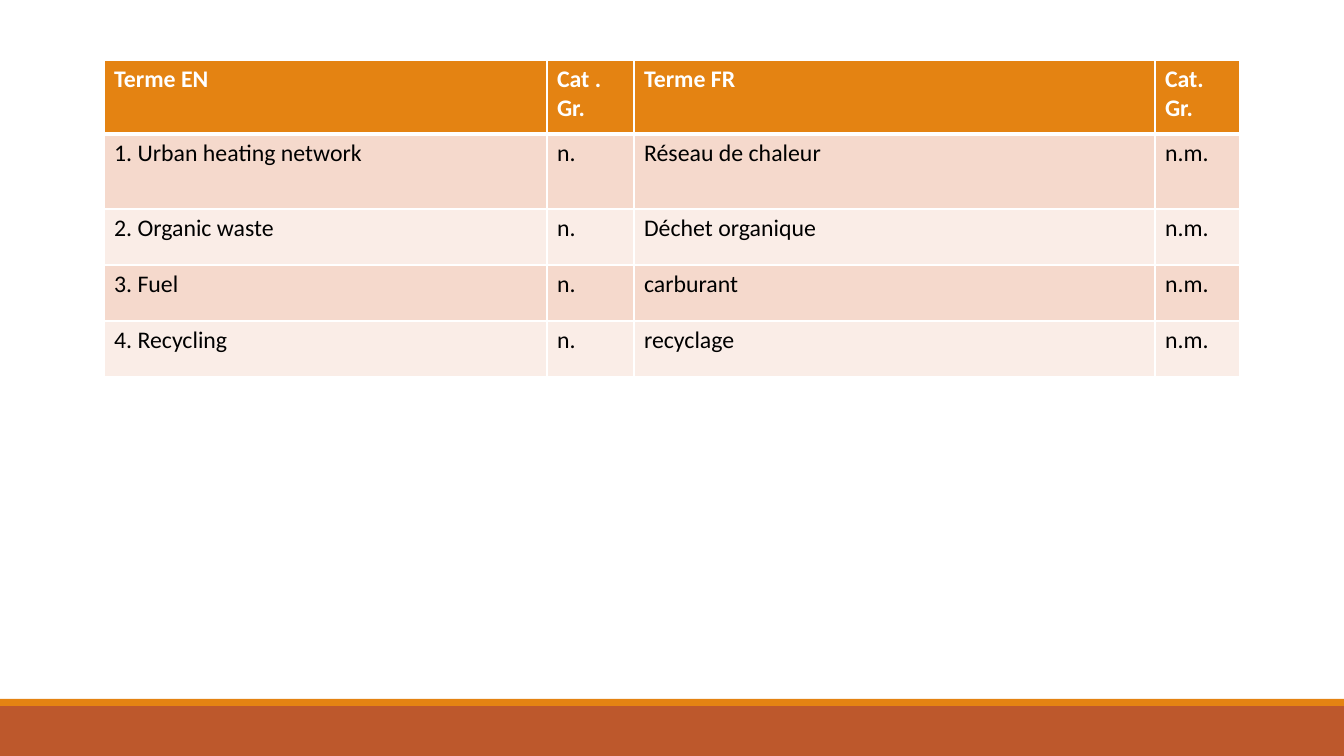
from lxml.etree import SubElement
from pptx import Presentation
from pptx.dml.color import RGBColor
from pptx.enum.shapes import MSO_SHAPE
from pptx.oxml.ns import qn
from pptx.util import Emu, Pt


def px(n):
    return Emu(round(n * 914400 / 100.8))


def color(hex_code):
    return RGBColor.from_string(hex_code)


class SlideBuilder:
    """Holds the style and the current slide, and draws each kind of element."""

    font = "Calibri"
    size = Pt(17)
    white, black = "FFFFFF", "000000"
    orange, rust = "E48312", "BD582C"
    bands = ("F5D9CC", "FAEDE7")

    def __init__(self, slide):
        self.slide = slide

    def bar(self, x, y, w, h, fill):
        sp = self.slide.shapes.add_shape(MSO_SHAPE.RECTANGLE, px(x), px(y), px(w), px(h))
        sp.shadow.inherit = False
        sp.fill.solid()
        sp.fill.fore_color.rgb = color(fill)
        sp.line.fill.background()

    def borders(self, cell, top, bottom):
        tcPr = cell._tc.get_or_add_tcPr()
        for side, width in (("L", 1), ("R", 1), ("T", top), ("B", bottom)):
            ln = SubElement(tcPr, qn(f"a:ln{side}"), w=str(Pt(width)))
            fill = SubElement(ln, qn("a:solidFill"))
            SubElement(fill, qn("a:srgbClr"), val=self.white)

    def cell(self, cell, text, row):
        header = row == 0
        self.borders(cell, 3 if row == 1 else 1, 3 if header else 1)
        cell.fill.solid()
        cell.fill.fore_color.rgb = color(self.orange if header else self.bands[(row - 1) % 2])
        cell.text_frame.text = text
        font = cell.text_frame.paragraphs[0].runs[0].font
        font.name, font.size, font.bold = self.font, self.size, header
        font.color.rgb = color(self.white if header else self.black)

    def table(self, x, y, widths, heights, rows):
        frame = self.slide.shapes.add_table(
            len(rows), len(widths), px(x), px(y), px(sum(widths)), px(sum(heights)))
        table = frame.table
        for column, w in zip(table.columns, widths):
            column.width = px(w)
        for row, h in zip(table.rows, heights):
            row.height = px(h)
        for i, texts in enumerate(rows):
            for j, text in enumerate(texts):
                self.cell(table.cell(i, j), text, i)


def main():
    prs = Presentation()
    prs.slide_width, prs.slide_height = px(1344), px(756)
    s = SlideBuilder(prs.slides.add_slide(prs.slide_layouts[6]))
    s.bar(0, 706, 1344, 50, s.rust)
    s.bar(0, 699, 1344, 7, s.orange)
    terms = [
        ("Terme EN", "Cat . Gr.", "Terme FR", "Cat. Gr."),
        ("1. Urban heating network", "n.", "Réseau de chaleur", "n.m."),
        ("2. Organic waste", "n.", "Déchet organique", "n.m."),
        ("3. Fuel", "n.", "carburant", "n.m."),
        ("4. Recycling", "n.", "recyclage", "n.m."),
    ]
    s.table(104, 60, (443, 87, 521, 85), (74, 75, 56, 56, 56), terms)
    prs.save("out.pptx")


if __name__ == "__main__":
    main()
